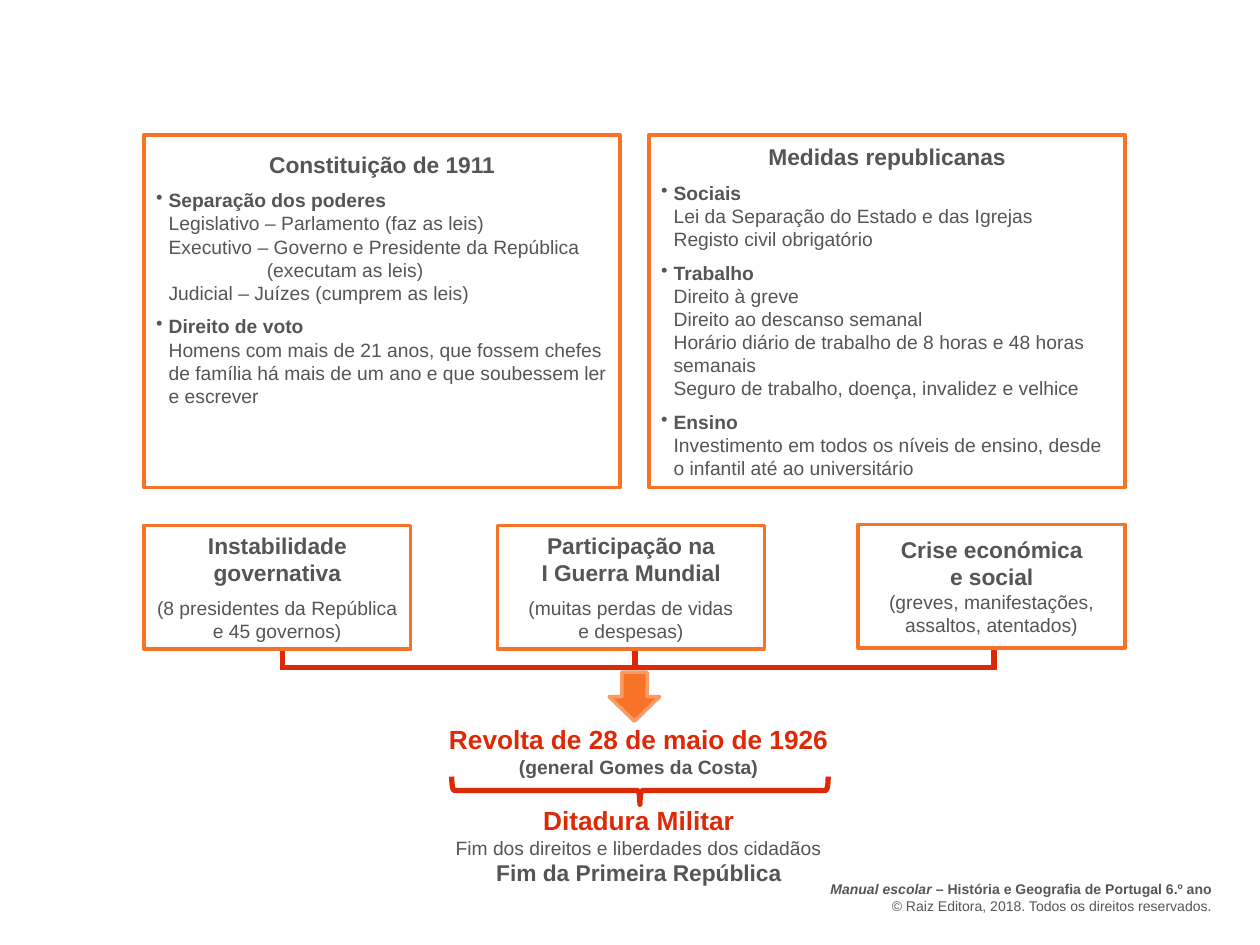
from lxml import etree
from pptx import Presentation
from pptx.dml.color import RGBColor
from pptx.enum import shapes as sh, text as tx
from pptx.oxml import ns
from pptx.util import Cm, Pt

HUES = {"ink": "555555", "red": "DD2905", "edge": "F87228",
        "rim": "FA9B66", "paper": "FFFFFF"}
MID = tx.PP_ALIGN.CENTER
STEP = 0.25  # indent of list text, cm


def hue(name):
    return RGBColor.from_string(HUES[name])


def put(frame, text, size=11, bold=False, color="ink", align=None,
        after=0, left=0, hang=0, bullet=False, lead=""):
    """Add one paragraph; lead is an italic opening run."""
    para = frame.paragraphs[0]
    if para.runs:
        para = frame.add_paragraph()
    props = para._p.get_or_add_pPr()
    props.set("marL", str(Cm(left)))
    props.set("indent", str(Cm(hang)))
    if bullet:
        etree.SubElement(props, ns.qn("a:buChar")).set("char", "•")
    para.alignment = align or tx.PP_ALIGN.LEFT
    para.space_after = Pt(after)
    for part, slant in ((lead, True), (text, False)):
        if part:
            run = para.add_run()
            run.text = part
            font = run.font
            font.name, font.size = "Arial", Pt(size)
            font.bold, font.italic = bold, slant
            font.color.rgb = hue(color)


def shape(slide, kind, box, fill=None, line="edge", width=2):
    item = slide.shapes.add_shape(kind, *map(Cm, box))
    item.shadow.inherit = False
    if fill:
        item.fill.solid()
        item.fill.fore_color.rgb = hue(fill)
    else:
        item.fill.background()
    item.line.color.rgb = hue(line)
    item.line.width = Pt(width)
    return item


def panel(slide, box, line="edge", anchor=tx.MSO_ANCHOR.MIDDLE):
    item = shape(slide, sh.MSO_SHAPE.RECTANGLE, box, "paper", line)
    frame = item.text_frame
    frame.word_wrap = True
    frame.vertical_anchor = anchor
    return frame


def rule(slide, x1, y1, x2, y2):
    item = slide.shapes.add_connector(
        sh.MSO_CONNECTOR.STRAIGHT, Cm(x1), Cm(y1), Cm(x2), Cm(y2))
    item.line.color.rgb = hue("red")
    item.line.width = Pt(3)
    etree.SubElement(item._element.spPr, ns.qn("a:effectLst"))


def topics(slide, box, title, groups, anchor=tx.MSO_ANCHOR.MIDDLE, top=0.13):
    """Framed list: a heading, then bulleted topics with their lines."""
    frame = panel(slide, box, anchor=anchor)
    frame.margin_top = Cm(top)
    put(frame, title, size=13, bold=True, align=MID, after=6)
    for i, (head, lines) in enumerate(groups):
        put(frame, head, bold=True, left=STEP, hang=-STEP, bullet=True)
        for j, (line, deep) in enumerate(lines):
            last = j == len(lines) - 1 and i < len(groups) - 1
            put(frame, line, left=STEP + deep, hang=-deep,
                after=6 if last else 0)


def cause(slide, box, heads, notes, gap):
    frame = panel(slide, box)
    for head in heads:
        put(frame, head, size=13, bold=True, align=MID,
            after=gap if head == heads[-1] else 0)
    for note in notes:
        put(frame, note, align=MID)


def outcome(slide, box):
    """Arrow, result text and the brace between its two halves."""
    x, y, w, h = box
    shape(slide, sh.MSO_SHAPE.DOWN_ARROW,
          (x + 4.89, y - 1.18, 1.02, 0.99), "edge", "rim")
    frame = panel(slide, box, line="paper")
    put(frame, "Revolta de 28 de maio de 1926", size=15, bold=True,
        color="red", align=MID)
    put(frame, "(general Gomes da Costa)", bold=True, align=MID, after=15)
    put(frame, "Ditadura Militar", size=15, bold=True, color="red", align=MID)
    put(frame, "Fim dos direitos e liberdades dos cidadãos", align=MID)
    put(frame, "Fim da Primeira República", size=13, bold=True, align=MID)
    brace = shape(slide, sh.MSO_SHAPE.RIGHT_BRACE,
                  (x + 5.23, y - 2.59, 0.56, 7.59), line="red", width=3)
    brace.rotation = 90


def links(slide, xs, top, base):
    for x in xs:
        rule(slide, x, top, x, base)
    edge = 0.05  # covers the outer corners
    rule(slide, xs[0] - edge, base, xs[-1] + edge, base)


def credit(slide, box):
    frame = slide.shapes.add_textbox(*map(Cm, box)).text_frame
    frame.word_wrap = True
    right = tx.PP_ALIGN.RIGHT
    put(frame, "– História e Geografia de Portugal 6.º ano", size=8,
        bold=True, align=right, lead="Manual escolar ")
    put(frame, "© Raiz Editora, 2018. Todos os direitos reservados.",
        size=8, align=right)


def main():
    deck = Presentation()
    deck.slide_width, deck.slide_height = Cm(25.4), Cm(19.05)
    slide = deck.slides.add_slide(deck.slide_layouts[6])

    credit(slide, (15.72, 17.63, 8.97, 0.94))
    outcome(slide, (7.39, 14.73, 10.97, 3))
    links(slide, (5.69, 12.8, 20.04), 11.7, 13.46)

    # Upper lists; a second value is the hanging indent of the line
    topics(slide, (2.9, 2.72, 9.6, 7.11), "Constituição de 1911", [
        ("Separação dos poderes", [
            ("Legislativo – Parlamento (faz as leis)", 0),
            ("Executivo – Governo e Presidente da República "
             "(executam as leis)", 1.98),
            ("Judicial – Juízes (cumprem as leis)", 0)]),
        ("Direito de voto", [
            ("Homens com mais de 21 anos, que fossem chefes de família há "
             "mais de um ano e que soubessem ler e escrever", 0)]),
    ], anchor=tx.MSO_ANCHOR.TOP, top=0.32)
    topics(slide, (13.08, 2.72, 9.6, 7.11), "Medidas republicanas", [
        ("Sociais", [
            ("Lei da Separação do Estado e das Igrejas", 0),
            ("Registo civil obrigatório", 0)]),
        ("Trabalho", [
            ("Direito à greve", 0),
            ("Direito ao descanso semanal", 0),
            ("Horário diário de trabalho de 8 horas e 48 horas semanais", 0),
            ("Seguro de trabalho, doença, invalidez e velhice", 0)]),
        ("Ensino", [
            ("Investimento em todos os níveis de ensino, desde o infantil "
             "até ao universitário", 0)]),
    ])

    # Causes of the revolt
    for x, y, heads, notes, gap in (
        (2.9, 10.59, ["Instabilidade governativa"],
         ["(8 presidentes da República e 45 governos)"], 6),
        (10.03, 10.59, ["Participação na", "I Guerra Mundial"],
         ["(muitas perdas de vidas", "e despesas)"], 6),
        (17.3, 10.57, ["Crise económica", "e social"],
         ["(greves, manifestações, assaltos, atentados)"], 0),
    ):
        cause(slide, (x, y, 5.38, 2.49), heads, notes, gap)

    deck.save("out.pptx")


if __name__ == "__main__":
    main()
